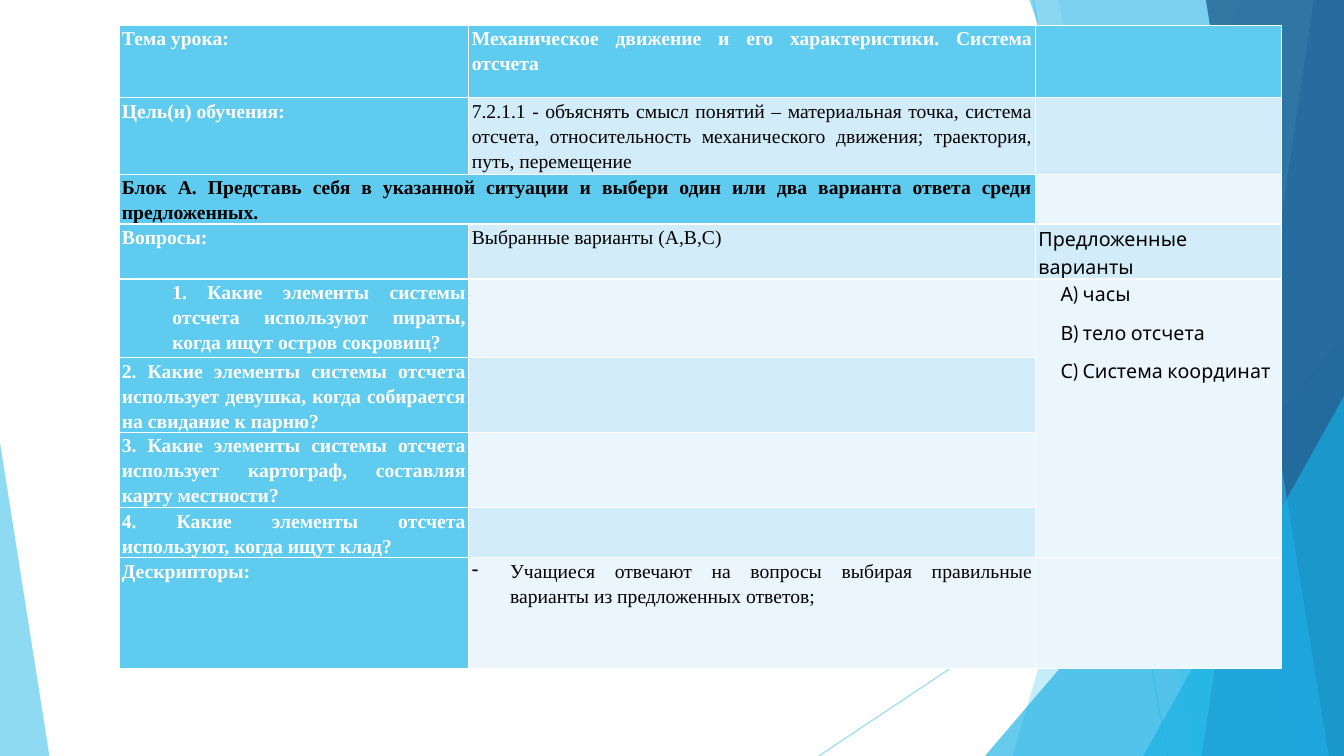
from lxml.etree import SubElement
from pptx import Presentation
from pptx.dml.color import RGBColor
from pptx.enum.shapes import MSO_CONNECTOR, MSO_SHAPE
from pptx.enum.text import PP_ALIGN
from pptx.oxml.ns import qn
from pptx.util import Inches, Pt

SKY = RGBColor(0x5F, 0xCB, 0xEF)
AZURE = RGBColor(0x17, 0xB0, 0xE4)
BLUE = RGBColor(0x2E, 0x83, 0xC3)
NAVY = RGBColor(0x22, 0x62, 0x92)
PALE = RGBColor(0xD2, 0xEC, 0xF9)
MIST = RGBColor(0xEA, 0xF6, 0xFC)
WHITE = RGBColor(0xFF, 0xFF, 0xFF)
BLACK = RGBColor(0, 0, 0)

SERIF, SANS = "Times New Roman", "Cabin"
HEAD = (SERIF, WHITE, True)
BLOCK = (SERIF, BLACK, True)
BODY = (SERIF, BLACK, False)
NOTE = (SANS, BLACK, False)
LEFT, JUST = PP_ALIGN.LEFT, PP_ALIGN.JUSTIFY

# percent of slide width and height
LINES = [(76.89, 0, 86.87, 100), (100, 53.73, 60.92, 100)]
WEDGES = [
    ("band", (92.12, 75.32), SKY, 36),
    ("band", (78.77, 88.75), SKY, 20),
    ("peak", (73.29, 100, 44.4, 1), AZURE, 66),
    ("band", (76.59, 96.85), AZURE, 50),
    ("band", (97.75, 89.42), BLUE, 70),
    ("band", (89.72, 98.87), NAVY, 80),
    ("peak", (85.07, 100, 52.4, 1), AZURE, 66),
    ("peak", (0, 3.68, 58.53, 0), SKY, 70),
]
ORIGIN = (8.85, 3.33)
COLS = [26.03, 42.16, 18.3]
ROWS = [9.6, 10.13, 6.27, 4.67, 10.4, 9.73, 10, 6.27, 14.67]
MERGES = [((2, 0), (2, 1)), ((4, 2), (7, 2))]

# (row, column): style, alignment, left margin, first indent, bullet, paragraphs
TEXTS = {
    (0, 0): (HEAD, LEFT, 0, 0, "", ["Тема урока:"]),
    (0, 1): (HEAD, JUST, 0, 0, "", [
        "Механическое движение и его характеристики. Система отсчета"]),
    (1, 0): (HEAD, LEFT, 0, 0, "", ["Цель(и) обучения:"]),
    (1, 1): (BODY, JUST, 0, 0, "", [
        "7.2.1.1 - объяснять смысл понятий – материальная точка, система отсчета, "
        "относительность механического движения; траектория, путь, перемещение"]),
    (2, 0): (BLOCK, JUST, 0, 0, "", [
        "Блок А. Представь себя в указанной ситуации и выбери один или два "
        "варианта ответа среди предложенных."]),
    (3, 0): (HEAD, JUST, 0, 0, "", ["Вопросы:"]),
    (3, 1): (BODY, JUST, 0, 0, "", ["Выбранные варианты (А,В,С)"]),
    (3, 2): (NOTE, JUST, 0, 0, "", ["Предложенные варианты"]),
    (4, 0): (HEAD, JUST, 0.5, 0, "", [
        "1. Какие элементы системы отсчета используют пираты, "
        "когда ищут остров сокровищ?"]),
    (4, 2): (NOTE, JUST, 0, 0.22, "", [
        "А) часы", "В) тело отсчета", "С) Система координат"]),
    (5, 0): (HEAD, JUST, 0, 0, "", [
        "2. Какие элементы системы отсчета использует девушка, "
        "когда собирается на свидание к парню?"]),
    (6, 0): (HEAD, JUST, 0, 0, "", [
        "3. Какие элементы системы отсчета использует картограф, "
        "составляя карту местности?"]),
    (7, 0): (HEAD, JUST, 0, 0, "", [
        "4. Какие элементы отсчета используют, когда ищут клад?"]),
    (8, 0): (HEAD, LEFT, 0, 0, "", ["Дескрипторы:"]),
    (8, 1): (BODY, JUST, 0.38, -0.38, "-", [
        "Учащиеся отвечают на вопросы выбирая правильные варианты "
        "из предложенных ответов;"]),
}

deck = Presentation()
deck.slide_width, deck.slide_height = Inches(13.33), Inches(7.5)
slide = deck.slides.add_slide(deck.slide_layouts[6])


def across(share):
    """Turn a percent of the slide width into a length."""
    return round(deck.slide_width * share / 100)


def down(share):
    """Turn a percent of the slide height into a length."""
    return round(deck.slide_height * share / 100)


def fade(part, alpha):
    """Make the solid colour in a fill or line see-through."""
    tint = next(part.iter(qn("a:srgbClr")))
    SubElement(tint, qn("a:alpha"), val=str(alpha * 1000))


def add_line(x1, y1, x2, y2):
    """Draw one thin background line."""
    line = slide.shapes.add_connector(
        MSO_CONNECTOR.STRAIGHT, across(x1), down(y1), across(x2), down(y2))
    line.line.color.rgb = SKY
    line.line.width = Pt(0.75)
    fade(line.line._get_or_add_ln(), 70)
    SubElement(line._element.spPr, qn("a:effectLst"))


def add_band(top, foot):
    """Draw a band from a slanted edge to the right side."""
    pen = slide.shapes.build_freeform(across(top), 0)
    pen.add_line_segments(
        [(across(100), 0), (across(100), down(100)), (across(foot), down(100))])
    return pen.convert_to_shape()


def add_peak(left, right, top, apex):
    """Draw a triangle that stands on the bottom edge."""
    peak = slide.shapes.add_shape(
        MSO_SHAPE.ISOSCELES_TRIANGLE, across(left), down(top),
        across(right - left), down(100 - top))
    peak.adjustments[0] = apex
    return peak


def write(cell, style, align, margin, indent, bullet, lines):
    """Fill a cell with styled paragraphs."""
    face, ink, bold = style
    cell.margin_left = cell.margin_right = Inches(0.03)
    cell.margin_top = cell.margin_bottom = 0
    for num, line in enumerate(lines):
        para = cell.text_frame.add_paragraph() if num else cell.text_frame.paragraphs[0]
        para.alignment = align
        para.line_spacing = 1.15
        para.space_after = Pt(8)
        props = para._p.get_or_add_pPr()
        props.set("marL", str(Inches(margin)))
        props.set("indent", str(Inches(indent)))
        if bullet:
            SubElement(props, qn("a:buChar"), char=bullet)
        run = para.add_run()
        run.text = line
        run.font.name, run.font.size = face, Pt(14)
        run.font.bold = bold
        run.font.color.rgb = ink


def add_grid():
    """Build the lesson table."""
    grid = slide.shapes.add_table(
        len(ROWS), len(COLS), across(ORIGIN[0]), down(ORIGIN[1]),
        across(sum(COLS)), down(sum(ROWS))).table
    grid.first_col = True
    for col, share in zip(grid.columns, COLS):
        col.width = across(share)
    for row, share in zip(grid.rows, ROWS):
        row.height = down(share)
    for start, end in MERGES:
        grid.cell(*start).merge(grid.cell(*end))
    for r in range(len(ROWS)):
        for c in range(len(COLS)):
            cell = grid.cell(r, c)
            cell.fill.solid()
            cell.fill.fore_color.rgb = SKY if r * c == 0 and (r, c) != (2, 1) and (
                r == 0 or c == 0) else PALE if r % 2 else MIST
            if (r, c) in TEXTS:
                write(cell, *TEXTS[r, c])


def main():
    """Draw the slide and save it."""
    for ends in LINES:
        add_line(*ends)
    for kind, spots, tint, alpha in WEDGES:
        wedge = add_band(*spots) if kind == "band" else add_peak(*spots)
        wedge.shadow.inherit = False
        wedge.fill.solid()
        wedge.fill.fore_color.rgb = tint
        fade(wedge._element.spPr, alpha)
        wedge.line.fill.background()
    add_grid()
    deck.save("out.pptx")


if __name__ == "__main__":
    main()
